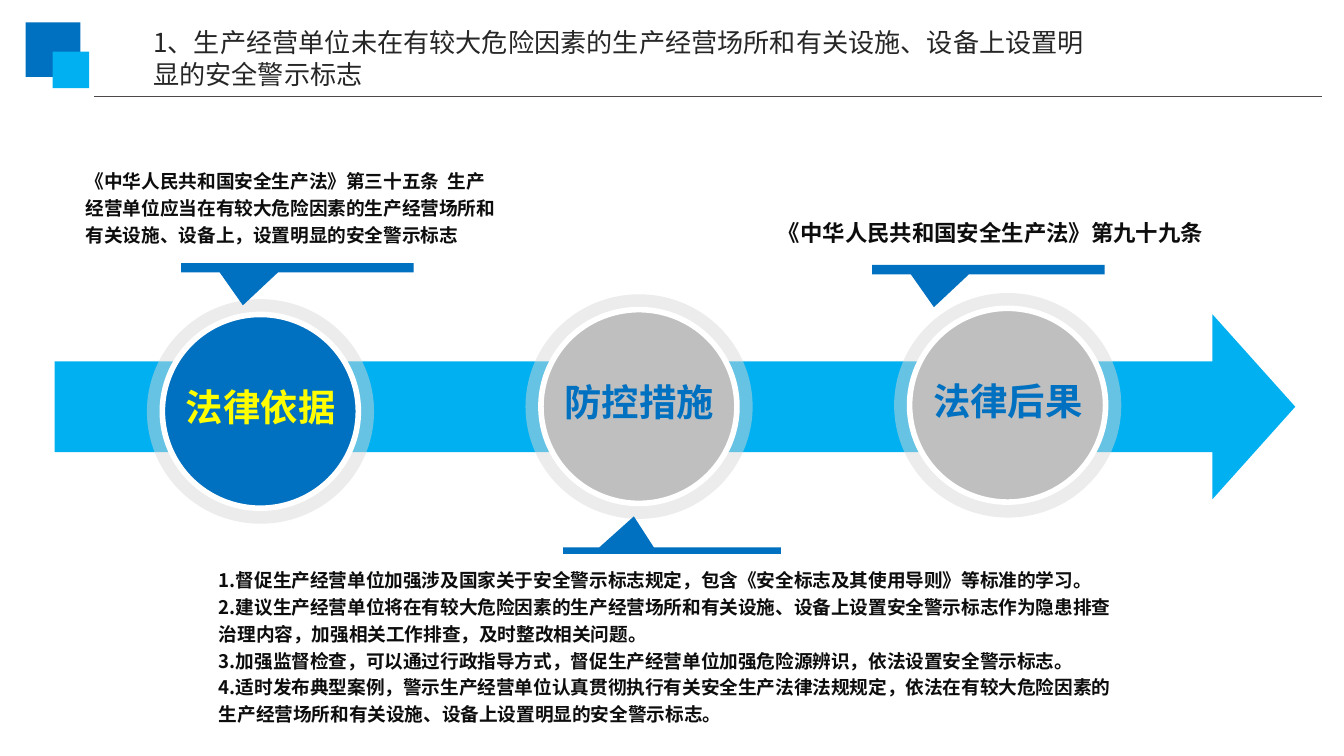
from typing import NamedTuple

from lxml import etree
from pptx import Presentation
from pptx.dml.color import RGBColor
from pptx.enum import shapes, text
from pptx.oxml.ns import qn
from pptx.util import Pt

FONT = "Noto Sans CJK SC"
BLUE, SKY, GREY, INK = "0070C0", "00B0F0", "BFBFBF", "0D0D0D"
BODY = dict(size=Pt(10), bold=True)


class Box(NamedTuple):
    x: float
    y: float
    w: float
    h: float


class Stage(NamedTuple):
    label: str
    x: float
    y: float
    fill: str
    color: str


class Callout(NamedTuple):
    box: Box
    tip_x: float
    tip_y: float


class Note(NamedTuple):
    box: Box
    lines: list[str]
    color: str
    spacing: float
    fmt: dict


STAGES = [
    Stage("防控措施", 281.5, 157.7, GREY, BLUE),
    Stage("法律后果", 479, 157, GREY, BLUE),
    Stage("法律依据", 78.7, 160.3, BLUE, "FFFF00"),
]
CALLOUTS = [
    Callout(Box(301.7, 293.2, 116.6, 3.6), -0.175, -5.095),
    Callout(Box(97, 141, 124.6, 5), -0.234, 4.033),
    Callout(Box(467.2, 142, 124.6, 5), -0.234, 4.033),
]
NOTES = [
    Note(Box(75, 10.8, 517, 41),
         ["1、生产经营单位未在有较大危险因素的生产经营场所和有关设施、设备上设置明显的安全警示标志"],
         "262626", 1, dict(size=Pt(14), bold=False)),
    Note(Box(110.2, 298.8, 501, 94.3),
         ["1.督促生产经营单位加强涉及国家关于安全警示标志规定，包含《安全标志及其使用导则》等标准的学习。",
          "2.建议生产经营单位将在有较大危险因素的生产经营场所和有关设施、设备上设置安全警示标志作为隐患排查治理内容，加强相关工作排查，及时整改相关问题。",
          "3.加强监督检查，可以通过行政指导方式，督促生产经营单位加强危险源辨识，依法设置安全警示标志。",
          "4.适时发布典型案例，警示生产经营单位认真贯彻执行有关安全生产法律法规规定，依法在有较大危险因素的生产经营场所和有关设施、设备上设置明显的安全警示标志。"],
         INK, 1.2, BODY),
    Note(Box(38.9, 85, 237, 51),
         ["《中华人民共和国安全生产法》第三十五条  生产经营单位应当在有较大危险因素的生产经营场所和有关设施、设备上，设置明显的安全警示标志"],
         INK, 1.2, BODY),
    Note(Box(409.7, 110.9, 245.5, 24.5), ["《中华人民共和国安全生产法》第九十九条"],
         INK, 1.2, dict(size=Pt(12), bold=True)),
]


def rgb(value: str) -> RGBColor:
    return RGBColor.from_string(value)


def add_shape(s, kind, box: Box, fill: str, adj=(), line: str = "", alpha: int = 100):
    sp = s.shapes.add_shape(kind, *map(Pt, box))
    sp.shadow.inherit = False
    sp.fill.solid()
    sp.fill.fore_color.rgb = rgb(fill)
    if alpha < 100:
        clr = sp.fill._xPr.find(qn("a:solidFill"))[0]
        etree.SubElement(clr, qn("a:alpha"), val=str(alpha * 1000))
    if line:
        sp.line.color.rgb = rgb(line)
        sp.line.width = Pt(3)
    else:
        sp.line.fill.background()
    for i, value in enumerate(adj):
        sp.adjustments[i] = value
    return sp


def add_text(s, note: Note, align=text.PP_ALIGN.LEFT):
    tf = s.shapes.add_textbox(*map(Pt, note.box)).text_frame
    tf.word_wrap = True
    for i, line in enumerate(note.lines):
        p = tf.add_paragraph() if i else tf.paragraphs[0]
        p.alignment = align
        p.line_spacing = note.spacing
        r = p.add_run()
        r.text = line
        for key, value in dict(note.fmt, name=FONT).items():
            setattr(r.font, key, value)
        r.font.color.rgb = rgb(note.color)
        etree.SubElement(r.font._element, qn("a:ea"), typeface=FONT)


def add_stage(s, stage: Stage):
    x, y = stage.x, stage.y
    oval = shapes.MSO_SHAPE.OVAL
    add_shape(s, oval, Box(x, y, 121.7, 120.3), "D8D8D8", alpha=48)
    add_shape(s, oval, Box(x + 8.3, y + 8.2, 105, 103.8), stage.fill, line="FFFFFF")
    add_text(s, Note(Box(x - 6, y + 42, 134, 42.5), [stage.label], stage.color, 1,
                     dict(size=Pt(20), bold=True)), text.PP_ALIGN.CENTER)


def add_rule(s):
    c = s.shapes.add_connector(shapes.MSO_CONNECTOR.STRAIGHT,
                               Pt(50.4), Pt(51.6), Pt(708), Pt(51.6))
    c.line.color.rgb = rgb("4D4948")
    c.line.width = Pt(0.75)
    etree.SubElement(c._element.spPr, qn("a:effectLst"))


def main():
    prs = Presentation()
    prs.slide_width, prs.slide_height = Pt(720), Pt(405)
    s = prs.slides.add_slide(prs.slide_layouts[6])
    add_shape(s, shapes.MSO_SHAPE.RECTANGLE, Box(13.8, 12, 29.3, 29.3), BLUE)
    add_shape(s, shapes.MSO_SHAPE.RECTANGLE, Box(28.2, 27.6, 19.6, 19.6), SKY)
    add_rule(s)
    add_shape(s, shapes.MSO_SHAPE.RIGHT_ARROW, Box(29.3, 168.4, 664.6, 99), SKY,
              adj=(0.491, 0.448))
    for stage in STAGES:
        add_stage(s, stage)
    for c in CALLOUTS:
        add_shape(s, shapes.MSO_SHAPE.RECTANGULAR_CALLOUT, c.box, BLUE,
                  adj=(c.tip_x, c.tip_y))
    for note in NOTES:
        add_text(s, note)
    prs.save("out.pptx")


if __name__ == "__main__":
    main()
